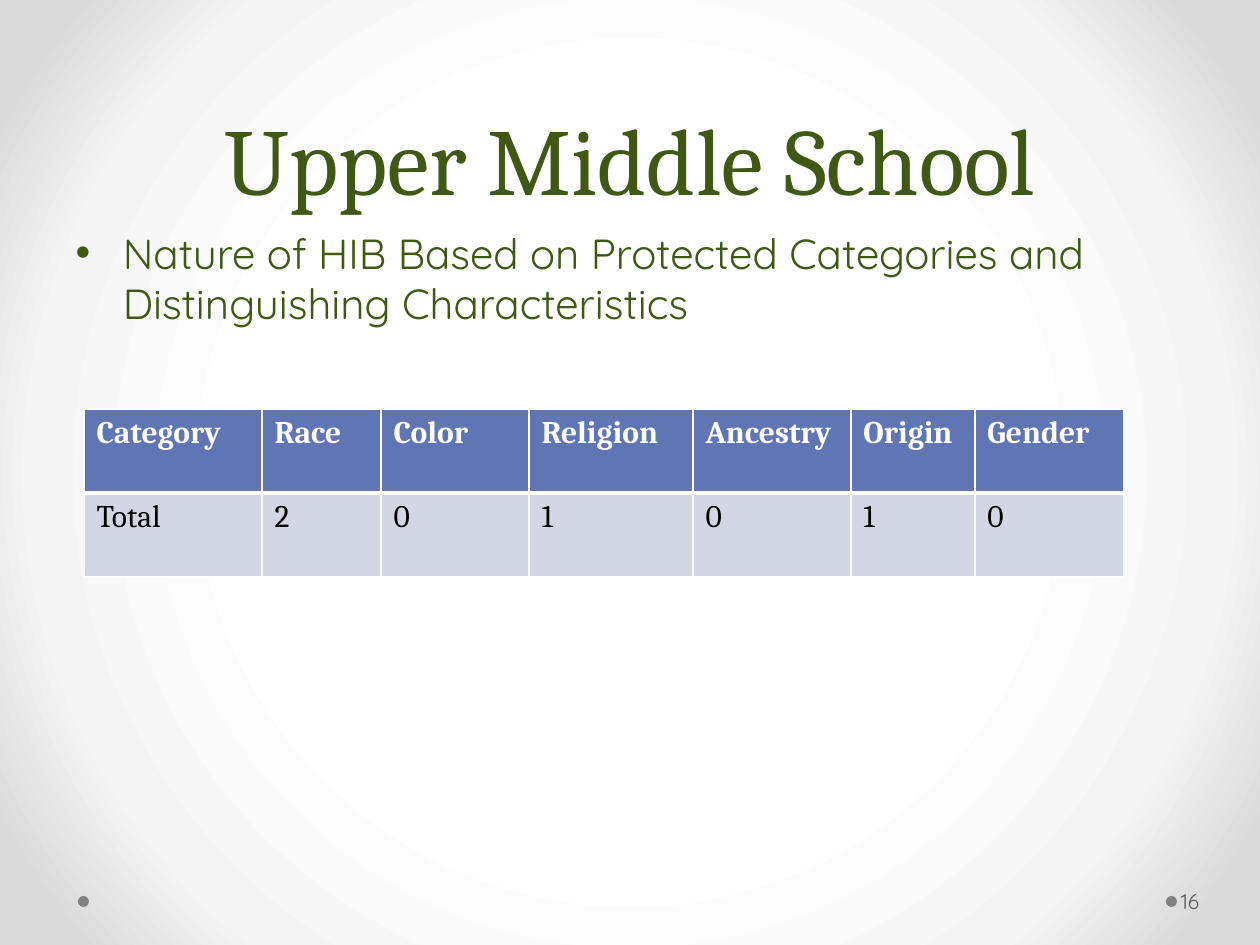
import pptx
import pptx.util
import pptx.dml.color
import pptx.enum.shapes
import pptx.enum.text
import pptx.oxml
import pptx.oxml.ns

EMU_PER_PX = 914400 / 126
COLORS = {
    "green": "405814",
    "header": "6076B4",
    "row": "D2D6E5",
    "white": "FFFFFF",
    "pale": "F4F4F4",
    "edge": "DADADA",
    "dot": "808080",
    "number": "595959",
    "black": "000000",
}
COLUMN_WIDTHS = [178, 119, 148, 164, 158, 124, 149]
ROW_HEIGHT = 84
ROWS = [
    ["Category", "Race", "Color", "Religion", "Ancestry", "Origin", "Gender"],
    ["Total", "2", "0", "1", "0", "1", "0"],
]


def px(length):
    return pptx.util.Emu(round(length * EMU_PER_PX))


def rgb(name):
    return pptx.dml.color.RGBColor.from_string(COLORS[name])


def place(shape, left, top, width, height):
    shape.left, shape.top = px(left), px(top)
    shape.width, shape.height = px(width), px(height)


def write(frame, text, font, size, color, bold=False):
    frame.text = text
    para = frame.paragraphs[0]
    for span in para.runs:
        span.font.name = font
        span.font.size = pptx.util.Pt(size)
        span.font.bold = bold
        span.font.color.rgb = rgb(color)
    return para


def paint_background(page):
    page.background.fill.solid()
    solid = page.element.xpath("./p:cSld/p:bg/p:bgPr/a:solidFill")[0]
    stops = "".join(
        f'<a:gs pos="{percent * 1000}"><a:srgbClr val="{COLORS[name]}"/></a:gs>'
        for percent, name in [(50, "white"), (76, "pale"), (92, "edge")]
    )
    gradient = pptx.oxml.parse_xml(
        f'<a:gradFill {pptx.oxml.ns.nsdecls("a")} rotWithShape="1">'
        f'<a:gsLst>{stops}</a:gsLst><a:path path="circle">'
        '<a:fillToRect l="50000" t="50000" r="50000" b="50000"/>'
        "</a:path></a:gradFill>"
    )
    solid.getparent().replace(solid, gradient)


def add_dot(page, left):
    dot = page.shapes.add_shape(
        pptx.enum.shapes.MSO_SHAPE.OVAL, px(left), px(896), px(11), px(11)
    )
    dot.shadow.inherit = False
    dot.fill.solid()
    dot.fill.fore_color.rgb = rgb("dot")
    dot.line.fill.background()


def fill_title(page):
    title = page.shapes.title
    place(title, 63, 0, 1134, 221)
    frame = title.text_frame
    frame.auto_size = pptx.enum.text.MSO_AUTO_SIZE.NONE
    frame.vertical_anchor = pptx.enum.text.MSO_ANCHOR.BOTTOM
    para = write(frame, "Upper Middle School", "Cambria", 54, "green")
    para.alignment = pptx.enum.text.PP_ALIGN.CENTER
    para.line_spacing = pptx.util.Pt(58)


def fill_body(page):
    body = page.placeholders[1]
    place(body, 63, 221, 1134, 624)
    body.text_frame.auto_size = pptx.enum.text.MSO_AUTO_SIZE.NONE
    write(
        body.text_frame,
        "Nature of HIB Based on Protected Categories and Distinguishing Characteristics",
        "Quicksand", 24, "green",
    )


def add_page_number(page):
    box = page.shapes.add_textbox(px(1177), px(876), px(77), px(50))
    frame = box.text_frame
    frame.word_wrap = True
    frame.margin_left = px(4)
    frame.margin_right = px(6)
    frame.vertical_anchor = pptx.enum.text.MSO_ANCHOR.MIDDLE
    write(frame, "16", "Quicksand", 12, "number")


def set_borders(cell, widths):
    properties = cell._tc.get_or_add_tcPr()
    for index, (side, points) in enumerate(widths.items()):
        border = pptx.oxml.parse_xml(
            f'<a:ln{side} {pptx.oxml.ns.nsdecls("a")} w="{pptx.util.Pt(points)}">'
            f'<a:solidFill><a:srgbClr val="{COLORS["white"]}"/></a:solidFill>'
            f"</a:ln{side}>"
        )
        properties.insert(index, border)


def add_category_table(page):
    table = page.shapes.add_table(
        len(ROWS), len(COLUMN_WIDTHS), px(84), px(409),
        px(sum(COLUMN_WIDTHS)), px(ROW_HEIGHT * len(ROWS)),
    ).table
    for column, width in zip(table.columns, COLUMN_WIDTHS):
        column.width = px(width)
    for row_index, values in enumerate(ROWS):
        header = row_index == 0
        table.rows[row_index].height = px(ROW_HEIGHT)
        for column_index, value in enumerate(values):
            cell = table.cell(row_index, column_index)
            cell.fill.solid()
            cell.fill.fore_color.rgb = rgb("header" if header else "row")
            write(cell.text_frame, value, "Cambria", 18,
                  "white" if header else "black", header)
            set_borders(cell, {"L": 1, "R": 1, "T": 1 if header else 3,
                               "B": 3 if header else 1})


def main():
    deck = pptx.Presentation()
    deck.slide_width, deck.slide_height = px(1260), px(945)
    page = deck.slides.add_slide(deck.slide_layouts[1])
    paint_background(page)
    for left in (1166, 78):
        add_dot(page, left)
    fill_title(page)
    fill_body(page)
    add_page_number(page)
    add_category_table(page)
    deck.save("out.pptx")


if __name__ == "__main__":
    main()
